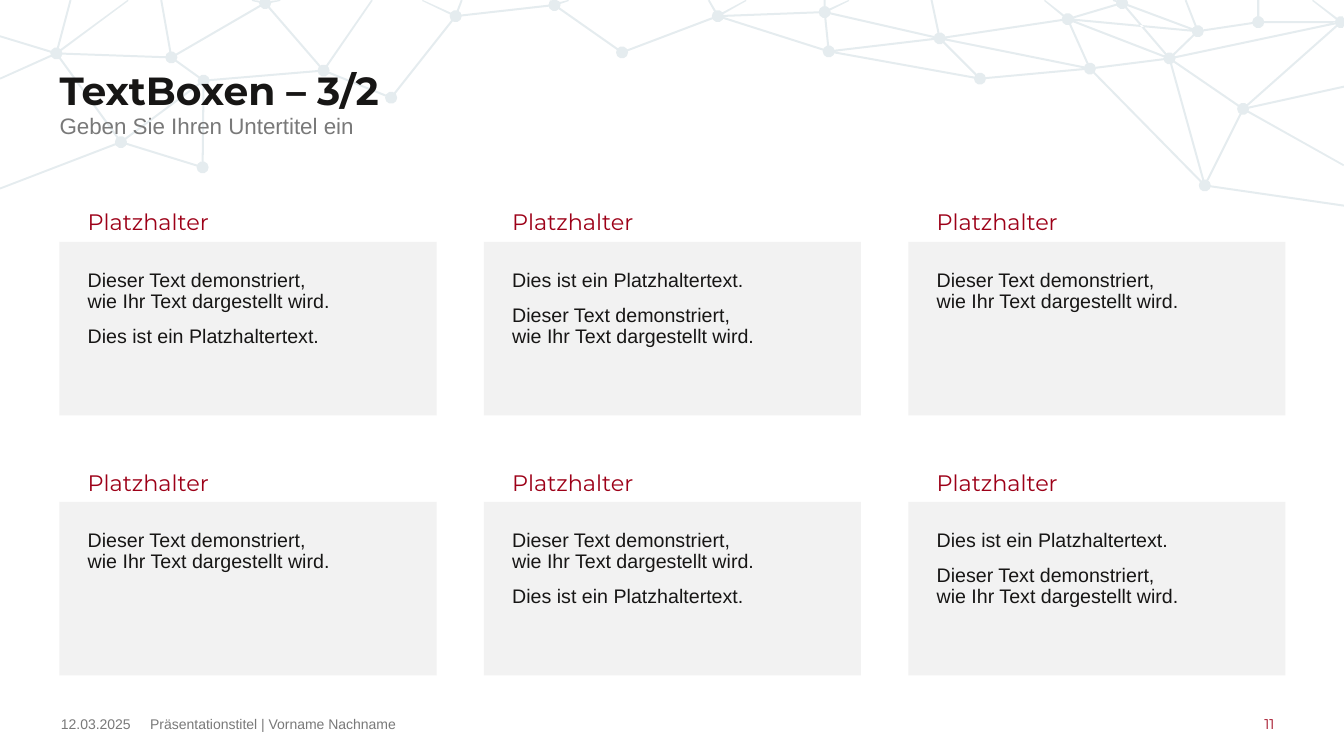
from dataclasses import dataclass
from math import cos, hypot, pi, sin

from lxml import etree
from pptx import Presentation
from pptx.dml.color import RGBColor
from pptx.enum.shapes import MSO_SHAPE
from pptx.enum.text import MSO_ANCHOR, PP_ALIGN
from pptx.oxml.ns import qn
from pptx.util import Inches, Pt

RECTANGLE = MSO_SHAPE.RECTANGLE
TOP, MIDDLE = MSO_ANCHOR.TOP, MSO_ANCHOR.MIDDLE
LEFT, CENTER = PP_ALIGN.LEFT, PP_ALIGN.CENTER

HEADING_FONT, BODY_FONT = "Montserrat", "Arial"
RED, INK, GREY, PANEL, NETWORK = "9D0018", "171615", "797979", "F2F2F2", "054B67"
SLIDE_WIDTH, SLIDE_HEIGHT = 13.33, 7.5
MARGIN = 0.59

# Card grid
COLUMNS = 3
COLUMN_STEP, CARD_WIDTH = 4.21, 3.74
HEADER_TOPS, HEADER_HEIGHT = (2.0, 4.59), 0.39
PANEL_TOPS, PANEL_HEIGHT = (2.4, 4.98), 1.72
PADDING = 0.28

# Network: node centres, links between nodes, links to the slide edge
NODE_RADIUS, NODE_SIDES = 0.06, 10
LINK_WIDTH = 0.02
NETWORK_ALPHA = "10000"
NODES = {
    "a": (0.56, 0.53), "b": (1.70, 0.57), "c": (1.20, 1.41), "d": (2.02, 0.80),
    "e": (2.01, 1.66), "f": (2.63, 0.03), "g": (3.21, 0.70), "h": (3.88, 0.97),
    "i": (4.52, 0.16), "j": (5.50, 0.05), "k": (6.17, 0.52), "l": (7.12, 0.16),
    "m": (8.18, 0.12), "n": (8.22, 0.51), "o": (9.32, 0.38), "p": (9.72, 0.78),
    "q": (10.59, 0.19), "r": (10.81, 0.68), "s": (11.60, 0.58), "t": (11.13, 0.03),
    "u": (11.88, 0.31), "v": (12.48, 0.22), "w": (13.30, 0.22), "x": (12.33, 1.08),
    "y": (11.95, 1.84),
}
LINKS = (
    "cd ce de ac ab bd bf fg dg gh hi ij jk kl lm ln mn mo no np op oq or pr "
    "qr qs qu qt tu ts us uv vw sw sx sy rs ry xy xw"
).split()
EDGE_LINKS = {
    "a": [(0, 0.36), (0, 0.78), (0.70, 0), (1.27, 0)],
    "b": [(1.60, 0)],
    "c": [(0, 1.87)],
    "f": [(2.50, 0), (2.78, 0)],
    "g": [(3.69, 0)],
    "i": [(4.19, 0), (4.58, 0)],
    "j": [(5.46, 0), (5.64, 0)],
    "l": [(7.03, 0), (7.40, 0)],
    "m": [(8.18, 0), (8.42, 0)],
    "o": [(9.24, 0)],
    "q": [(10.36, 0)],
    "t": [(11.04, 0)],
    "u": [(11.76, 0)],
    "v": [(12.48, 0)],
    "w": [(13.02, 0)],
    "x": [(13.33, 0.86), (13.33, 1.64)],
    "y": [(13.33, 2.04)],
}


@dataclass
class Card:
    heading: str
    paragraphs: list[str]


@dataclass
class Label:
    text: str
    left: float
    top: float
    width: float
    height: float
    style: dict


DEMO = "Dieser Text demonstriert,\nwie Ihr Text dargestellt wird."
DUMMY = "Dies ist ein Platzhaltertext."
HEADING = "Platzhalter"
CARDS = [
    Card(HEADING, [DEMO, DUMMY]),
    Card(HEADING, [DUMMY, DEMO]),
    Card(HEADING, [DEMO]),
    Card(HEADING, [DEMO]),
    Card(HEADING, [DEMO, DUMMY]),
    Card(HEADING, [DUMMY, DEMO]),
]

FOOTER_TOP, FOOTER_HEIGHT = 7.06, 0.24
FOOTER_STYLE = dict(size=10, color=GREY, anchor=MIDDLE)
LABELS = [
    Label("TextBoxen – 3/2", MARGIN, 0.71, 12.15, 0.71,
          dict(size=28, font=HEADING_FONT, color=INK, bold=True, line_spacing=0.9)),
    Label("Geben Sie Ihren Untertitel ein", MARGIN, 1.14, 12.15, 0.28,
          dict(size=16, color=GREY, line_spacing=0.9, space_after=10)),
    Label("12.03.2025", MARGIN, FOOTER_TOP, 0.72, FOOTER_HEIGHT,
          dict(FOOTER_STYLE, align=CENTER)),
    Label("Präsentationstitel | Vorname Nachname", 1.49, FOOTER_TOP, 4.97, FOOTER_HEIGHT,
          FOOTER_STYLE),
    Label("11", 12.54, FOOTER_TOP, 0.2, FOOTER_HEIGHT,
          dict(FOOTER_STYLE, font=HEADING_FONT, color=RED)),
]


def paint(fill, color: str) -> None:
    """Give a fill one solid colour."""
    fill.solid()
    fill.fore_color.rgb = RGBColor.from_string(color)


def finish(shape, color: str) -> None:
    """Flat fill without outline or shadow."""
    shape.shadow.inherit = False
    paint(shape.fill, color)
    shape.line.fill.background()


def write(box, paragraphs: list[str], *, size: float, color: str, font: str = BODY_FONT,
          bold: bool = False, align=LEFT, anchor=TOP, line_spacing: float = 1.0,
          space_after: float = 0, insets=(0, 0, 0, 0)) -> None:
    frame = box.text_frame
    frame.word_wrap = True
    frame.vertical_anchor = anchor
    (frame.margin_left, frame.margin_top,
     frame.margin_right, frame.margin_bottom) = map(Inches, insets)
    for index, text in enumerate(paragraphs):
        para = frame.add_paragraph() if index else frame.paragraphs[0]
        para.text = text
        para.alignment = align
        para.line_spacing = line_spacing
        para.space_after = Pt(space_after)
        for span in para.runs:
            span.font.name = font
            span.font.size = Pt(size)
            span.font.bold = bold
            paint(span.font.fill, color)


def add_textbox(page, left: float, top: float, width: float, height: float):
    return page.shapes.add_textbox(Inches(left), Inches(top), Inches(width), Inches(height))


def node_outline(center: tuple) -> list[tuple]:
    angles = [2 * pi * side / NODE_SIDES for side in range(NODE_SIDES)]
    return [(center[0] + NODE_RADIUS * cos(angle), center[1] + NODE_RADIUS * sin(angle))
            for angle in angles]


def link_outline(start: tuple, end: tuple, end_gap: float) -> list[tuple]:
    """Thin strip that begins at the rim of the start node."""
    (x1, y1), (x2, y2) = start, end
    length = hypot(x2 - x1, y2 - y1)
    dx, dy = (x2 - x1) / length, (y2 - y1) / length
    half = LINK_WIDTH / 2
    corners = [(NODE_RADIUS, half), (length - end_gap, half),
               (length - end_gap, -half), (NODE_RADIUS, -half)]
    return [(x1 + along * dx - side * dy, y1 + along * dy + side * dx)
            for along, side in corners]


def draw_network(page) -> None:
    outlines = [node_outline(center) for center in NODES.values()]
    outlines += [link_outline(NODES[start], NODES[end], NODE_RADIUS) for start, end in LINKS]
    outlines += [link_outline(NODES[name], end, 0)
                 for name, ends in EDGE_LINKS.items() for end in ends]
    builder = None
    for outline in outlines:
        # Points stay inside the slide
        first, *rest = [(Inches(min(max(x, 0), SLIDE_WIDTH)), Inches(max(y, 0)))
                        for x, y in outline]
        if builder is None:
            builder = page.shapes.build_freeform(*first)
        else:
            builder.move_to(*first)
        builder.add_line_segments(rest, close=True)
    network = builder.convert_to_shape()
    finish(network, NETWORK)
    tint = network._element.spPr.find(qn("a:solidFill"))[0]
    etree.SubElement(tint, qn("a:alpha"), val=NETWORK_ALPHA)


def draw_card(page, card: Card, index: int) -> None:
    row, column = divmod(index, COLUMNS)
    left = MARGIN + column * COLUMN_STEP
    header = add_textbox(page, left, HEADER_TOPS[row], CARD_WIDTH, HEADER_HEIGHT)
    write(header, [card.heading], size=16, font=HEADING_FONT, color=RED, anchor=MIDDLE,
          space_after=10, insets=(PADDING, 0, 0.16, 0))
    panel = page.shapes.add_shape(RECTANGLE, Inches(left), Inches(PANEL_TOPS[row]),
                                  Inches(CARD_WIDTH), Inches(PANEL_HEIGHT))
    finish(panel, PANEL)
    write(panel, card.paragraphs, size=14, color=INK, line_spacing=0.9,
          space_after=10, insets=(PADDING,) * 4)


def main() -> None:
    deck = Presentation()
    deck.slide_width, deck.slide_height = Inches(SLIDE_WIDTH), Inches(SLIDE_HEIGHT)
    page = deck.slides.add_slide(deck.slide_layouts[6])
    draw_network(page)
    for index, card in enumerate(CARDS):
        draw_card(page, card, index)
    # Title, subtitle and footer
    for label in LABELS:
        box = add_textbox(page, label.left, label.top, label.width, label.height)
        write(box, [label.text], **label.style)
    deck.save("out.pptx")


if __name__ == "__main__":
    main()
